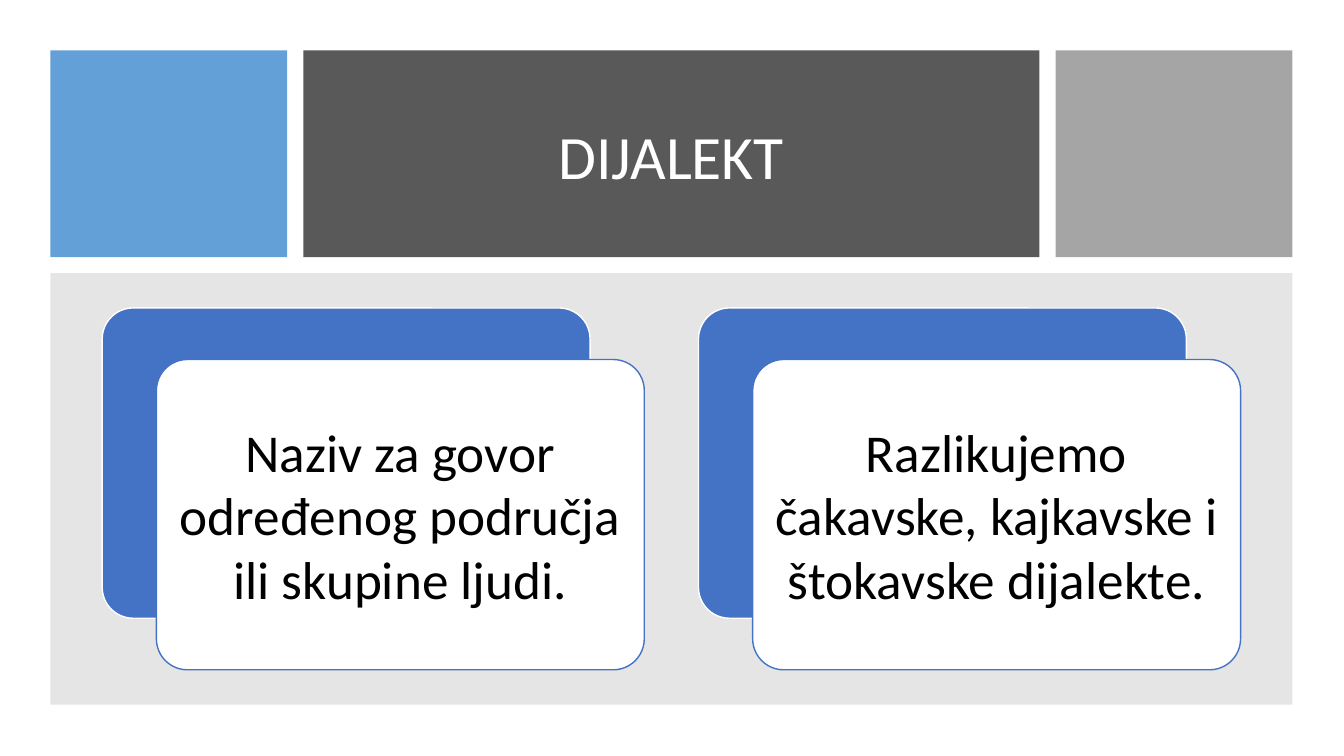
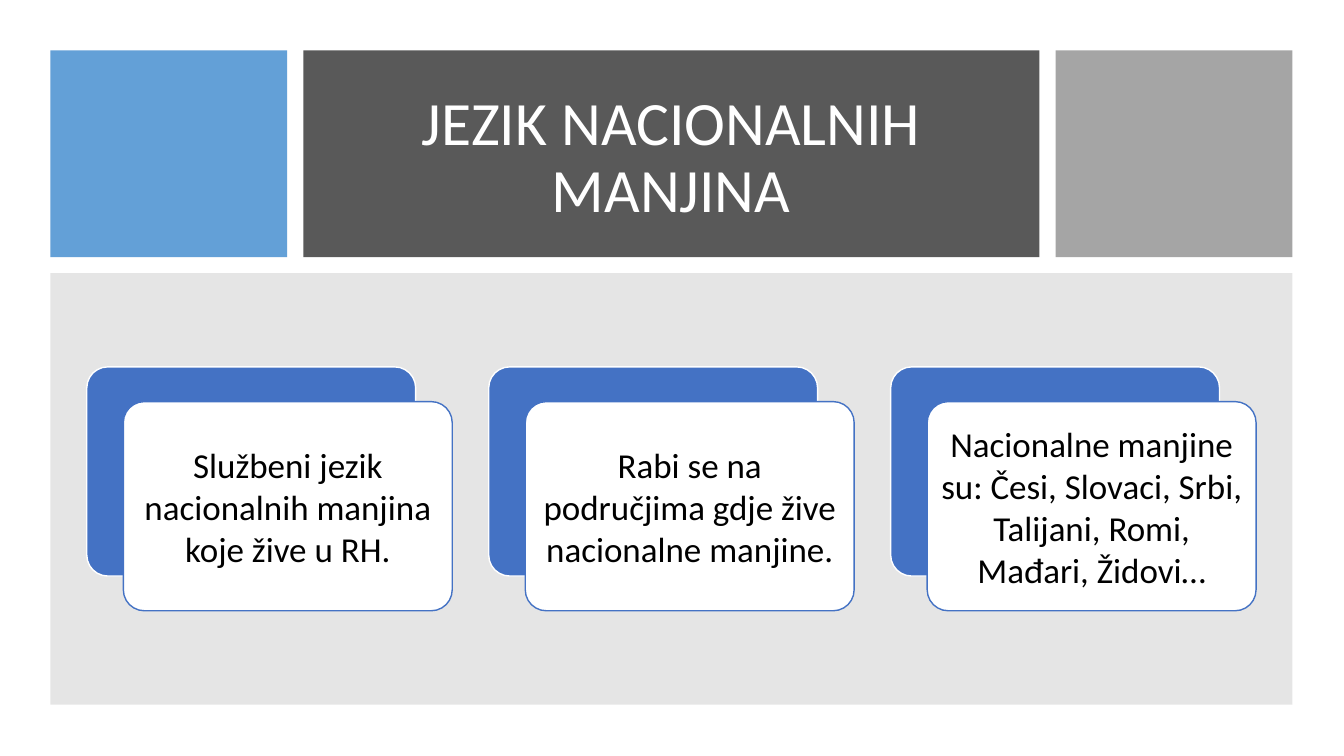
"""Build two slides on dialects and minority languages with layered cards."""
from lxml import etree
from pptx import Presentation
from pptx.dml.color import RGBColor
from pptx.enum.shapes import MSO_SHAPE
from pptx.enum.text import MSO_ANCHOR, MSO_AUTO_SIZE, PP_ALIGN
from pptx.oxml.ns import qn
from pptx.util import Pt

RECT, ROUNDED = MSO_SHAPE.RECTANGLE, MSO_SHAPE.ROUNDED_RECTANGLE
CENTER, MIDDLE, NO_FIT = PP_ALIGN.CENTER, MSO_ANCHOR.MIDDLE, MSO_AUTO_SIZE.NONE

SKY = RGBColor(0x5B, 0x9B, 0xD5)
BLUE = RGBColor(0x44, 0x72, 0xC4)
CHARCOAL = RGBColor(0x59, 0x59, 0x59)
SILVER = RGBColor(0xA5, 0xA5, 0xA5)
GREY = RGBColor(0x80, 0x80, 0x80)
WHITE = RGBColor(0xFF, 0xFF, 0xFF)
BLACK = RGBColor(0, 0, 0)
FONT = "Calibri"

SLIDES = [
    {
        "title": "DIJALEKT",
        "cards": [
            "Naziv za govor određenog područja ili skupine ljudi.",
            "Razlikujemo čakavske, kajkavske i štokavske dijalekte.",
        ],
        "card_width": 348.5, "text_size": 38, "inset": 5,
    },
    {
        "title": "JEZIK NACIONALNIH MANJINA",
        "cards": [
            "Službeni jezik nacionalnih manjina koje žive u RH.",
            "Rabi se na područjima gdje žive nacionalne manjine.",
            "Nacionalne manjine su: Česi, Slovaci, Srbi, Talijani, Romi, Mađari, Židovi…",
        ],
        "card_width": 234.9, "text_size": 25, "inset": 2.8,
    },
]

MARGIN, GAP, BAND_HEIGHT = 36, 11.6, 147.6
BANDS = [(169.2, SKY, 95), (525.6, CHARCOAL, 100), (169.2, SILVER, 100)]
PANEL_TOP, PANEL_WIDTH, PANEL_HEIGHT = 195.1, 887.2, 308.2
TITLE_BOX = (239.8, 57.6, 479.5, 112.3)
CARD_ASPECT, SHIFT_X, SHIFT_Y, STEP = 0.636, 1 / 9, 0.1056, 11 / 9


def add_box(slide, kind, box, fill, line=None, opacity=100):
    shape = slide.shapes.add_shape(kind, *map(Pt, box))
    shape.shadow.inherit = False
    shape.fill.solid()
    shape.fill.fore_color.rgb = fill
    if opacity < 100:
        color = shape.fill._xPr.find(f"{qn('a:solidFill')}/{qn('a:srgbClr')}")
        etree.SubElement(color, qn("a:alpha"), val=str(opacity * 1000))
    if line is None:
        shape.line.fill.background()
    else:
        shape.line.color.rgb = line
        shape.line.width = Pt(1)
    if kind == ROUNDED:
        shape.adjustments[0] = 0.1
    return shape


def write(shape, text, *, size, color, inset=(7.2, 3.6), spacing=1.0):
    frame = shape.text_frame
    frame.word_wrap = True
    frame.auto_size = NO_FIT
    frame.vertical_anchor = MIDDLE
    frame.margin_left = frame.margin_right = Pt(inset[0])
    frame.margin_top = frame.margin_bottom = Pt(inset[1])
    paragraph = frame.paragraphs[0]
    paragraph.alignment = CENTER
    paragraph.line_spacing = spacing
    run = paragraph.add_run()
    run.text = text
    run.font.name = FONT
    run.font.size = Pt(size)
    run.font.color.rgb = color


def add_frame(slide, heading):
    left = MARGIN
    for width, color, opacity in BANDS:
        add_box(slide, RECT, (left, MARGIN, width, BAND_HEIGHT), color, opacity=opacity)
        left += width + GAP
    add_box(slide, RECT, (MARGIN, PANEL_TOP, PANEL_WIDTH, PANEL_HEIGHT), GREY, opacity=20)
    title = slide.shapes.title
    title.left, title.top, title.width, title.height = map(Pt, TITLE_BOX)
    write(title, heading, size=44, color=WHITE, spacing=0.9)
    title.element.getparent().append(title.element)


def add_cards(slide, cards, width, size, inset):
    height = width * CARD_ASPECT
    shift_x, shift_y, step = width * SHIFT_X, width * SHIFT_Y, width * STEP
    row_width = step * (len(cards) - 1) + width + shift_x
    first = MARGIN + (PANEL_WIDTH - row_width) / 2
    top = PANEL_TOP + (PANEL_HEIGHT - height - shift_y) / 2
    for index, text in enumerate(cards):
        left = first + index * step
        add_box(slide, ROUNDED, (left, top, width, height), BLUE, WHITE)
        card = add_box(slide, ROUNDED, (left + shift_x, top + shift_y, width, height), WHITE, BLUE)
        write(card, text, size=size, color=BLACK, inset=(inset, inset))


def main():
    deck = Presentation()
    deck.slide_width, deck.slide_height = Pt(960), Pt(540)
    title_only = deck.slide_layouts[5]
    for content in SLIDES:
        slide = deck.slides.add_slide(title_only)
        add_frame(slide, content["title"])
        add_cards(slide, content["cards"], content["card_width"],
                  content["text_size"], content["inset"])
    deck.save("out.pptx")


if __name__ == "__main__":
    main()
